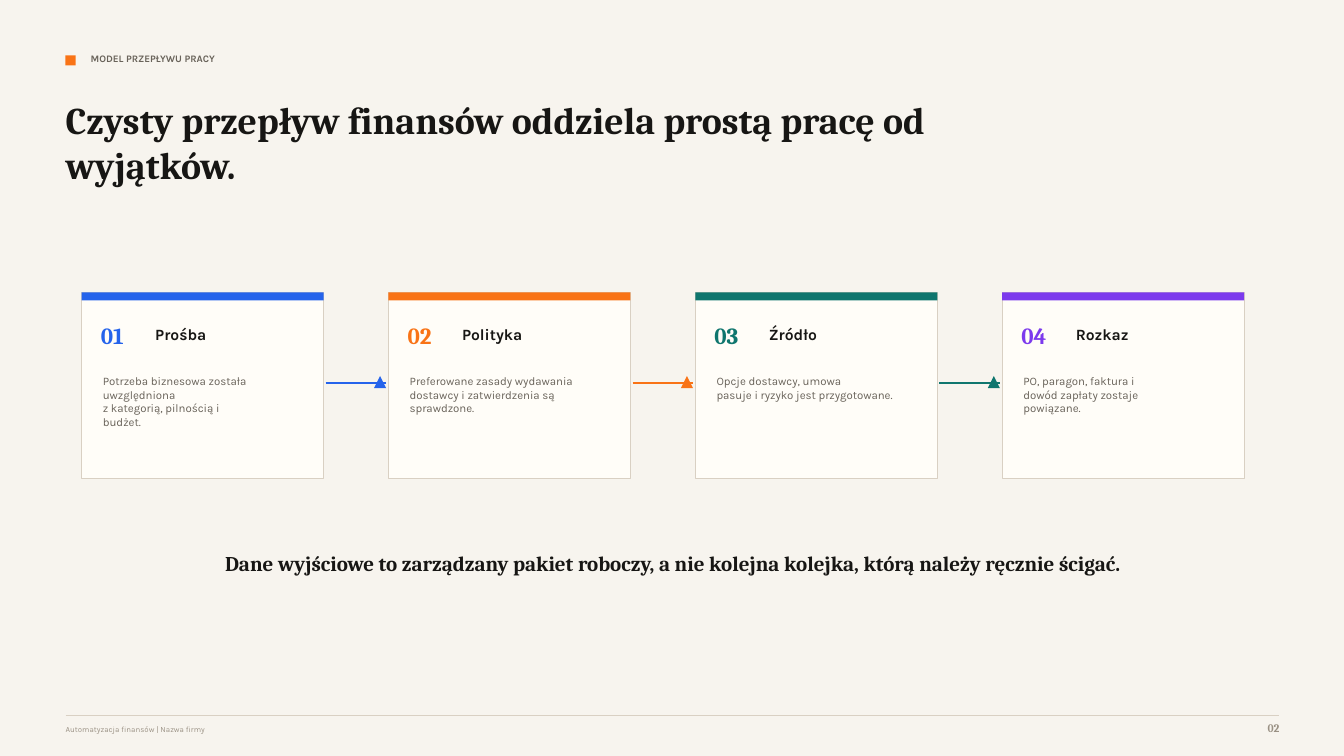
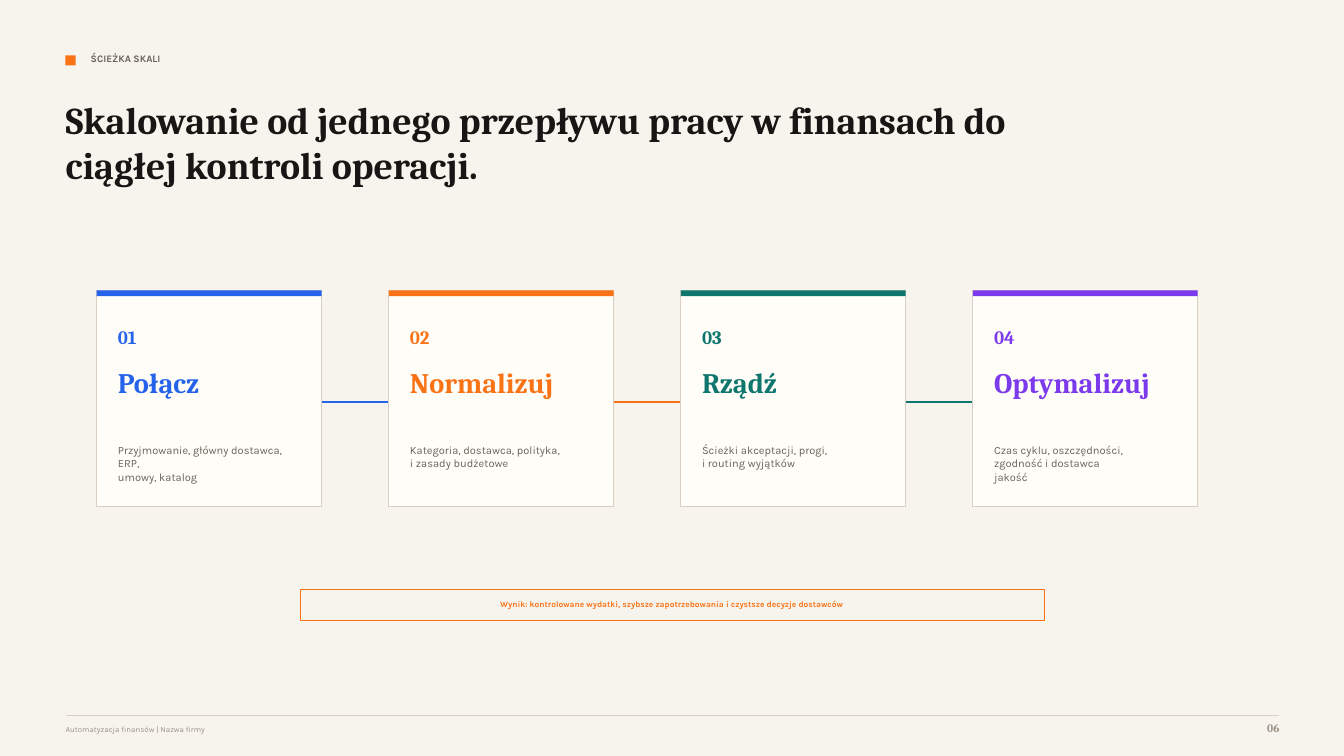
import pptx
import pptx.util
import pptx.dml.color
import pptx.enum.shapes
import pptx.enum.text
from dataclasses import dataclass
from lxml import etree

FLOW = {
    "tag": "MODEL PRZEPŁYWU PRACY",
    "title": "Czysty przepływ finansów oddziela prostą pracę od wyjątków.",
    "width": 9.38,
    "page": "02",
    "cards": [
        ("Prośba", "Potrzeba biznesowa została uwzględniona\n"
                   "z kategorią, pilnością i\nbudżet."),
        ("Polityka", "Preferowane zasady wydawania\n"
                     "dostawcy i zatwierdzenia są\nsprawdzone."),
        ("Źródło", "Opcje dostawcy, umowa\npasuje i ryzyko jest przygotowane."),
        ("Rozkaz", "PO, paragon, faktura i\ndowód zapłaty zostaje\npowiązane."),
    ],
    "close": "Dane wyjściowe to zarządzany pakiet roboczy, "
             "a nie kolejna kolejka, którą należy ręcznie ścigać.",
}
SCALE = {
    "tag": "ŚCIEŻKA SKALI",
    "title": "Skalowanie od jednego przepływu pracy w finansach "
             "do ciągłej kontroli operacji.",
    "width": 9.9,
    "page": "06",
    "cards": [
        ("Połącz", "Przyjmowanie, główny dostawca, ERP,\numowy, katalog"),
        ("Normalizuj", "Kategoria, dostawca, polityka,\ni zasady budżetowe"),
        ("Rządź", "Ścieżki akceptacji, progi,\ni routing wyjątków"),
        ("Optymalizuj", "Czas cyklu, oszczędności,\nzgodność i dostawca\njakość"),
    ],
    "close": "Wynik: kontrolowane wydatki, szybsze zapotrzebowania "
             "i czystsze decyzje dostawców",
}
FOOT = "Automatyzacja finansów | Nazwa firmy"


@dataclass(frozen=True)
class Theme:
    serif: str = "Cambria"
    sans: str = "Karla"
    page: str = "F7F4EE"
    card: str = "FFFDF8"
    rule: str = "D9D0C3"
    ink: str = "171614"
    soft: str = "69635A"
    pale: str = "9A9184"
    hot: str = "F97316"
    hues: tuple = ("2563EB", "F97316", "0F766E", "7C3AED")
    title: float = 27
    tag: float = 7.1
    foot: float = 5.6
    folio: float = 8.2
    step: float = 16.5
    name: float = 11.2
    note: float = 8.2
    close: float = 15
    stage: float = 13.5
    head: float = 20.2
    brief: float = 7.9
    badge: float = 6


T = Theme()
IN = pptx.util.Inches
ALIGN = pptx.enum.text.PP_ALIGN
KIND = pptx.enum.shapes.MSO_SHAPE

FLOW_GRID = {
    "first": 0.81, "last": 9.94, "top": 2.9, "wide": 2.4, "high": 1.85,
    "band": 0.08, "rail": 3.8, "gap": 0.02, "run": 0.6, "tip": 0.12,
    "step": (0.19, 0.29, 0.46, 0.29, T.step, T.serif),
    "name": (0.73, 0.32, 1.33, 0.21, T.name, T.sans),
    "note": (0.21, 0.81, 1.92, 0.71, T.note, T.sans),
    "dark": True,
}
SCALE_GRID = {
    "first": 0.96, "last": 9.65, "top": 2.88, "wide": 2.23, "high": 2.15,
    "band": 0.06, "rail": 3.99, "gap": 0, "run": 0.67, "tip": 0,
    "step": (0.21, 0.35, 0.46, 0.25, T.stage, T.serif),
    "name": (0.21, 0.74, 1.67, 0.46, T.head, T.serif),
    "note": (0.21, 1.52, 1.73, 0.46, T.brief, T.sans),
    "dark": False,
}


def rgb(hue):
    return pptx.dml.color.RGBColor.from_string(hue)


def fill_text(shape, text, size, face, hue, bold=True, align=ALIGN.LEFT):
    frame = shape.text_frame
    frame.text = text
    frame.word_wrap = True
    frame.auto_size = pptx.enum.text.MSO_AUTO_SIZE.NONE
    frame.vertical_anchor = pptx.enum.text.MSO_ANCHOR.TOP
    frame.margin_left = frame.margin_right = 0
    frame.margin_top = frame.margin_bottom = 0
    for para in frame.paragraphs:
        para.alignment = align
        for run in para.runs:
            font = run.font
            font.size, font.name, font.bold = pptx.util.Pt(size), face, bold
            font.color.rgb = rgb(hue)


def add_text(slide, box, *style, **more):
    fill_text(slide.shapes.add_textbox(*map(IN, box)), *style, **more)


def add_box(slide, box, fill=None, edge=None, kind=KIND.RECTANGLE):
    shape = slide.shapes.add_shape(kind, *map(IN, box))
    shape.shadow.inherit = False
    if fill:
        shape.fill.solid()
        shape.fill.fore_color.rgb = rgb(fill)
    else:
        shape.fill.background()
    if edge:
        shape.line.color.rgb = rgb(edge)
        shape.line.width = pptx.util.Pt(0.75)
    else:
        shape.line.fill.background()


def add_rule(slide, left, right, y, hue, width):
    line = slide.shapes.add_connector(
        pptx.enum.shapes.MSO_CONNECTOR.STRAIGHT,
        IN(left), IN(y), IN(right), IN(y))
    line.line.color.rgb = rgb(hue)
    line.line.width = pptx.util.Pt(width)
    etree.SubElement(line._element.spPr, pptx.oxml.ns.qn("a:effectLst"))


def add_slide(deck, data):
    slide = deck.slides.add_slide(deck.slide_layouts[5])
    title = slide.shapes.title
    title.left, title.top = IN(0.65), IN(0.96)
    title.width, title.height = IN(data["width"]), IN(1.08)
    fill_text(title, data["title"], T.title, T.serif, T.ink)
    add_box(slide, (0.65, 0.55, 0.1, 0.1), T.hot)
    add_text(slide, (0.9, 0.52, 5.83, 0.19), data["tag"], T.tag, T.sans, T.soft)
    add_rule(slide, 0.65, 12.69, 7.1, T.rule, 0.75)
    add_text(slide, (0.65, 7.19, 7.92, 0.15), FOOT, T.foot, T.sans, T.pale,
             bold=False)
    add_text(slide, (12.19, 7.15, 0.5, 0.19), data["page"], T.folio, T.serif,
             T.pale, align=ALIGN.RIGHT)
    return slide


def add_cards(slide, cards, grid):
    pitch = (grid["last"] - grid["first"]) / (len(cards) - 1)
    top, wide, tip = grid["top"], grid["wide"], grid["tip"]
    for i, (name, note) in enumerate(cards):
        hue = T.hues[i]
        left = grid["first"] + i * pitch
        add_box(slide, (left, top, wide, grid["high"]), T.card, T.rule)
        add_box(slide, (left, top, wide, grid["band"]), hue)
        parts = (
            ("step", f"{i + 1:02}", hue, True),
            ("name", name, T.ink if grid["dark"] else hue, True),
            ("note", note, T.soft, False),
        )
        for key, text, tint, bold in parts:
            x, y, w, h, size, face = grid[key]
            add_text(slide, (left + x, top + y, w, h), text, size, face, tint,
                     bold=bold)
        if i < len(cards) - 1:
            start = left + wide + grid["gap"]
            end = start + grid["run"]
            add_rule(slide, start, end, grid["rail"], hue, 1.75)
            if tip:
                add_box(slide, (end - tip, grid["rail"] - 0.07, tip, tip), hue,
                        kind=KIND.ISOSCELES_TRIANGLE)


def main():
    deck = pptx.Presentation()
    deck.slide_width, deck.slide_height = IN(13.33), IN(7.5)
    back = deck.slide_master.background.fill
    back.solid()
    back.fore_color.rgb = rgb(T.page)

    flow = add_slide(deck, FLOW)
    add_cards(flow, FLOW["cards"], FLOW_GRID)
    add_text(flow, (1.83, 5.46, 9.69, 0.44), FLOW["close"], T.close, T.serif,
             T.ink, align=ALIGN.CENTER)

    scale = add_slide(deck, SCALE)
    add_cards(scale, SCALE["cards"], SCALE_GRID)
    add_box(scale, (2.98, 5.85, 7.38, 0.31), edge=T.hot)
    add_text(scale, (3.1, 5.94, 7.12, 0.14), SCALE["close"], T.badge, T.sans,
             T.hot, align=ALIGN.CENTER)
    deck.save("out.pptx")


if __name__ == "__main__":
    main()
